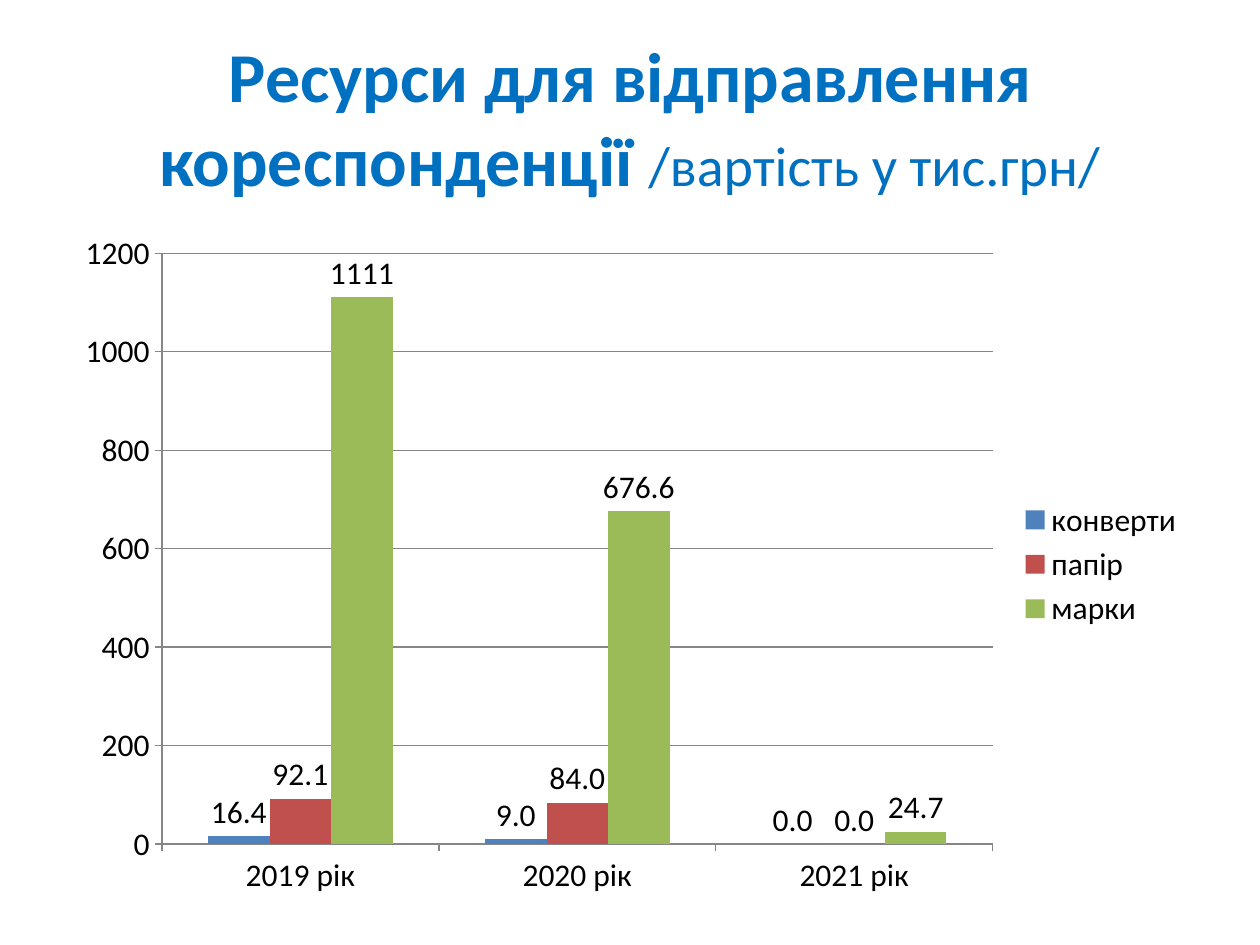
from pptx import Presentation
from pptx.chart.data import CategoryChartData
from pptx.dml.color import RGBColor
from pptx.enum import chart as ch, text
from pptx.util import Pt

# Content
TITLE = [("Ресурси для відправлення кореспонденції ", "title", True),
         ("/вартість у тис.грн/", "subtitle", False)]
YEARS = ["2019 рік", "2020 рік", "2021 рік"]
SERIES = [  # name, values, colour, label format
    ("конверти", (16.4, 9, 0), "4F81BD", "0.0"),
    ("папір", (92.1, 84, 0), "C0504D", "0.0"),
    ("марки", (1111, 676.6, 24.7), "9BBB59", "General"),
]

THEME = {
    "font": "Calibri",
    "colours": {"title": "0070C0", "text": "000000", "line": "868686"},
    "sizes": {"title": Pt(40), "subtitle": Pt(32), "chart": Pt(18)},
}
SLIDE_W, SLIDE_H = 720, 540
MARGIN = 36
WIDTH = SLIDE_W - 2 * MARGIN


def colour(name):
    return RGBColor.from_string(THEME["colours"].get(name, name))


def set_title(slide):
    sp = slide.shapes.title
    sp.left, sp.top, sp.width, sp.height = Pt(MARGIN), Pt(21.6), Pt(WIDTH), Pt(90)
    tf = sp.text_frame
    tf.word_wrap = True
    tf.auto_size = text.MSO_AUTO_SIZE.NONE
    tf.vertical_anchor = text.MSO_ANCHOR.MIDDLE
    p = tf.paragraphs[0]
    p.alignment = text.PP_ALIGN.CENTER
    p.font.name = THEME["font"]
    p.font.color.rgb = colour("title")
    for words, size, bold in TITLE:
        r = p.add_run()
        r.text = words
        r.font.size = THEME["sizes"][size]
        r.font.bold = bold


def add_cost_chart(slide):
    data = CategoryChartData()
    data.categories = YEARS
    for name, values, _, number_format in SERIES:
        data.add_series(name, values, number_format)
    chart = slide.shapes.add_chart(
        ch.XL_CHART_TYPE.COLUMN_CLUSTERED,
        Pt(MARGIN), Pt(126), Pt(WIDTH), Pt(393), data).chart
    chart.has_title = False
    chart.font.name = THEME["font"]
    chart.font.size = THEME["sizes"]["chart"]
    chart.font.color.rgb = colour("text")

    # Legend
    chart.has_legend = True
    chart.legend.position = ch.XL_LEGEND_POSITION.RIGHT
    chart.legend.include_in_layout = False

    # Axes and gridlines
    values = chart.value_axis
    values.minimum_scale, values.maximum_scale, values.major_unit = 0, 1200, 200
    values.has_major_gridlines = True
    values.tick_labels.number_format = "General"
    values.tick_labels.number_format_is_linked = False
    for axis in (chart.category_axis, values):
        axis.major_tick_mark = ch.XL_TICK_MARK.OUTSIDE
    for part in (chart.category_axis, values, values.major_gridlines):
        part.format.line.color.rgb = colour("line")
        part.format.line.width = Pt(0.75)

    # Columns and their labels
    plot = chart.plots[0]
    plot.gap_width = 150
    plot.overlap = 0
    plot.vary_by_categories = False
    for series, (_, _, fill, number_format) in zip(plot.series, SERIES):
        series.format.fill.solid()
        series.format.fill.fore_color.rgb = colour(fill)
        series.invert_if_negative = False
        labels = series.data_labels
        labels.show_value = True
        labels.position = ch.XL_LABEL_POSITION.OUTSIDE_END
        labels.number_format = number_format
        labels.number_format_is_linked = False


def main():
    prs = Presentation()
    prs.slide_width, prs.slide_height = Pt(SLIDE_W), Pt(SLIDE_H)
    slide = prs.slides.add_slide(prs.slide_layouts.get_by_name("Title Only"))
    set_title(slide)
    add_cost_chart(slide)
    prs.save("out.pptx")


if __name__ == "__main__":
    main()
